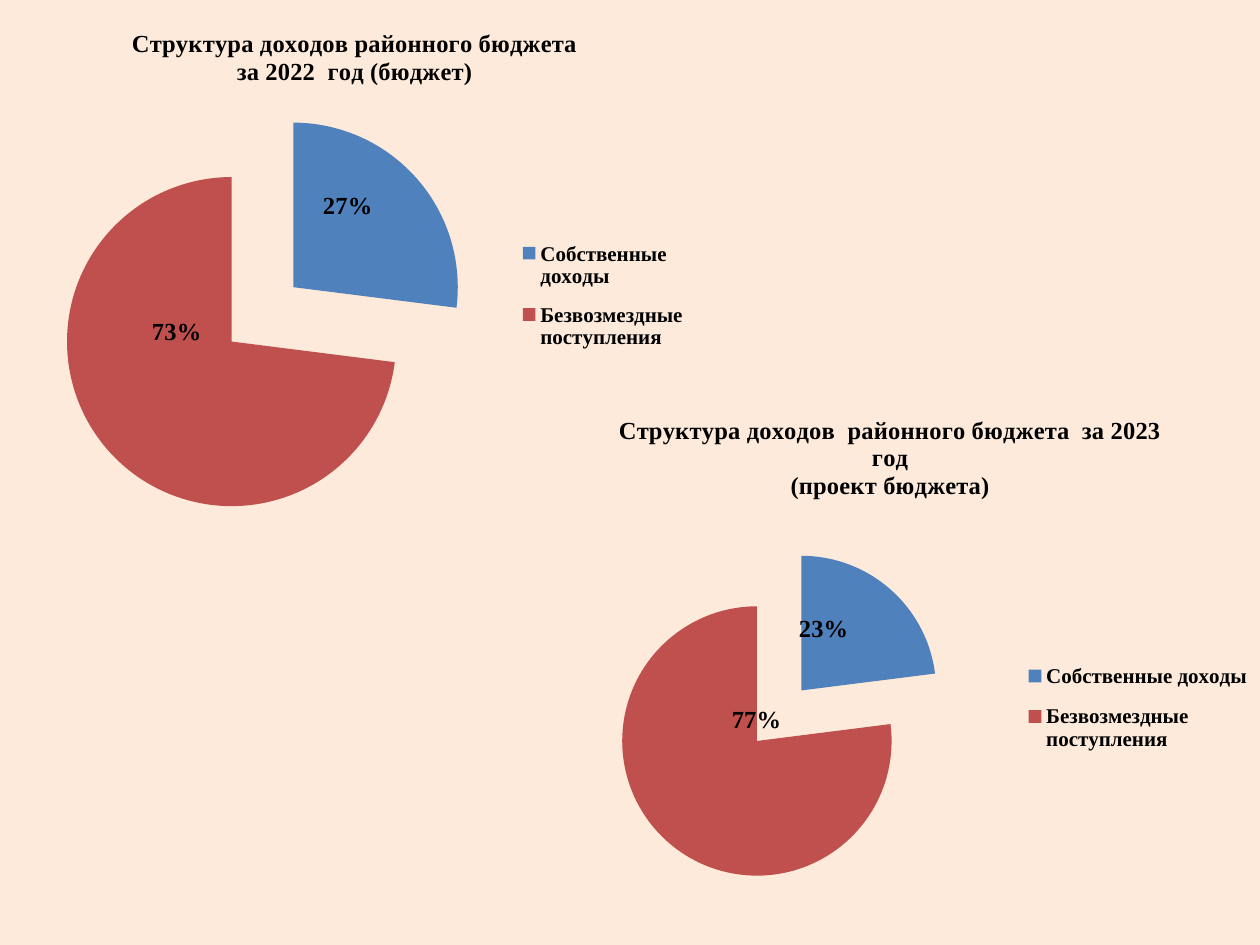
from lxml import etree
from pptx import Presentation
from pptx import util as u
from pptx.chart.data import CategoryChartData
from pptx.dml.color import RGBColor
from pptx.enum import chart as charts
from pptx.oxml import ns

FACE = "Times New Roman"
SLICE_COLOURS = ("4F81BD", "C0504D")
INCOME_KINDS = ("Собственные доходы", "Безвозмездные поступления")


def colour(hex_code):
    """Turn a hex string into a colour."""
    return RGBColor.from_string(hex_code)


def set_font(font, size):
    """Apply the bold black lettering shared by all chart text."""
    font.name, font.size, font.bold = FACE, u.Pt(size), True
    font.color.rgb = colour("000000")


def add_value(parent, tag, value):
    """Append a chart element that carries one value."""
    etree.SubElement(parent, ns.qn(f"c:{tag}")).set("val", str(value))


def set_layout(owner, index, **places):
    """Give a chart part a manual layout in fractions of the chart."""
    for old in owner.findall(ns.qn("c:layout")):
        owner.remove(old)
    layout = etree.Element(ns.qn("c:layout"))
    manual = etree.SubElement(layout, ns.qn("c:manualLayout"))
    for tag, value in places.items():
        add_value(manual, tag, value)
    owner.insert(index, layout)


def frame(x, y, w, h):
    """Describe a box measured from the chart's top left corner."""
    return dict(xMode="edge", yMode="edge", x=x, y=y, w=w, h=h)


def style_title(chart, lines):
    """Write the centred heading, one paragraph per line."""
    heading = chart.chart_title.text_frame
    heading.text = "\n".join(lines)
    for line in heading.paragraphs:
        set_font(line.font, 14)
    chart.chart_title.include_in_layout = False


def style_slices(series, label_shifts):
    """Colour and pull apart the slices, and place their percentages."""
    for index, fill in enumerate(SLICE_COLOURS):
        point = series.points[index]
        point.format.fill.solid()
        point.format.fill.fore_color.rgb = colour(fill)
        point.format.line.fill.background()
        set_font(point.data_label.font, 14)
        point.data_label.position = charts.XL_LABEL_POSITION.CENTER
    ser = series._element
    for old in ser.findall(ns.qn("c:explosion")):
        ser.remove(old)
    explosion = etree.Element(ns.qn("c:explosion"))
    explosion.set("val", "25")
    ser.find(ns.qn("c:dPt")).addprevious(explosion)
    for label, (x, y) in zip(ser.iter(ns.qn("c:dLbl")), label_shifts):
        set_layout(label, 1, x=x, y=y)
        label.find(ns.qn("c:showVal")).set("val", "0")
        label.find(ns.qn("c:showPercent")).set("val", "1")


def add_income_pie(slide, box, title, shares, plot, legend, label_shifts):
    """Place one income structure pie in the given box."""
    data = CategoryChartData()
    data.categories = INCOME_KINDS
    data.add_series("Series 1", shares)
    chart = slide.shapes.add_chart(
        charts.XL_CHART_TYPE.PIE, *map(u.Cm, box), data).chart
    chart.font.name, chart.font.size = "Calibri", u.Pt(10)
    chart.has_title = chart.has_legend = True
    style_title(chart, title)
    chart.legend.position = charts.XL_LEGEND_POSITION.RIGHT
    chart.legend.include_in_layout = False
    set_font(chart.legend.font, 12)
    set_layout(chart.legend._element, 1, **frame(*legend))
    pie = chart.plots[0]
    pie.vary_by_categories = True
    style_slices(pie.series[0], label_shifts)
    plot_area = chart._chartSpace.find(".//" + ns.qn("c:plotArea"))
    set_layout(plot_area, 0, layoutTarget="inner", **frame(*plot))


def main():
    """Build the slide with both budget years."""
    deck = Presentation()
    deck.slide_width, deck.slide_height = u.Cm(25.4), u.Cm(19.05)
    slide = deck.slides.add_slide(deck.slide_layouts[6])
    slide.background.fill.solid()
    slide.background.fill.fore_color.rgb = colour("FDEADA")
    add_income_pie(
        slide, (0, 0.13, 14.3, 10.8),
        ("Структура доходов районного бюджета", "за 2022  год (бюджет)"),
        (27, 73), (0.08, 0.19, 0.58, 0.77), (0.71, 0.41, 0.28, 0.26),
        ((-0.01, -0.05), (0.01, -0.12)))
    add_income_pie(
        slide, (10.49, 7.92, 14.91, 11.13),
        ("Структура доходов  районного бюджета  за 2023 год",
         "(проект бюджета)"),
        (23, 77), (0.09, 0.28, 0.52, 0.61), (0.67, 0.46, 0.33, 0.22),
        ((-0.03, -0.02), (0.06, -0.13)))
    deck.save("out.pptx")


if __name__ == "__main__":
    main()
